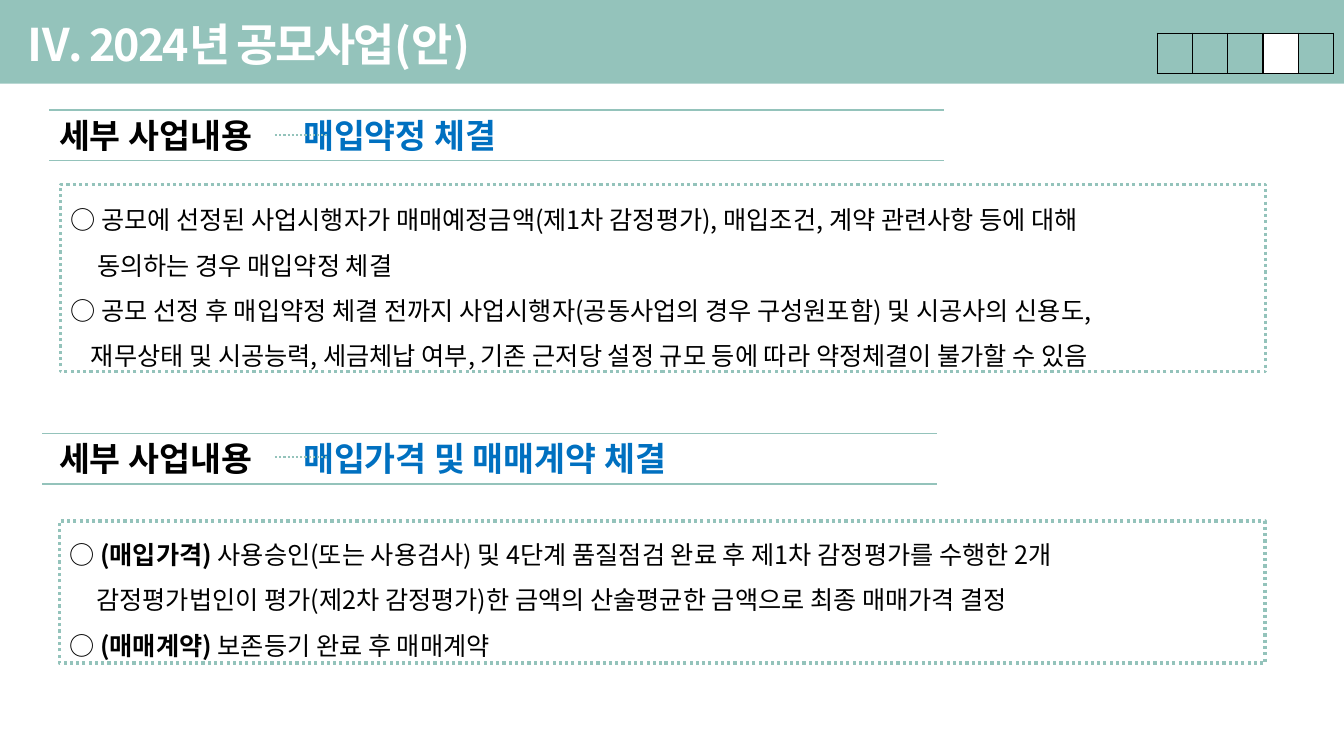
import pptx
import pptx.dml.color
import pptx.enum.dml
import pptx.enum.shapes
import pptx.enum.text
import pptx.oxml
import pptx.oxml.ns
import pptx.util

Cm = pptx.util.Cm
Pt = pptx.util.Pt
FONT = "Noto Sans CJK KR"
TEAL, WHITE, BLACK, BLUE = "94C3BB", "FFFFFF", "000000", "0070C0"
SLIDE_WIDTH, SLIDE_HEIGHT = 33.87, 19.05
FIRST_INDENT, SECOND_INDENT = 0.68, 0.52

CONTRACT_LINES = [
    (0, [("○ 공모에 선정된 사업시행자가 매매예정금액(제1차 감정평가), 매입조건, 계약 관련사항 등에 대해", False)]),
    (FIRST_INDENT, [("동의하는 경우 매입약정 체결", False)]),
    (0, [("○ 공모 선정 후 매입약정 체결 전까지 사업시행자(공동사업의 경우 구성원포함) 및 시공사의 신용도,", False)]),
    (SECOND_INDENT, [("재무상태 및 시공능력, 세금체납 여부, 기존 근저당 설정 규모 등에 따라 약정체결이 불가할 수 있음", False)]),
]
PRICE_LINES = [
    (0, [("○ ", False), ("(매입가격)", True),
         (" 사용승인(또는 사용검사) 및 4단계 품질점검 완료 후 제1차 감정평가를 수행한 2개", False)]),
    (FIRST_INDENT, [("감정평가법인이 평가(제2차 감정평가)한 금액의 산술평균한 금액으로 최종 매매가격 결정", False)]),
    (0, [("○ ", False), ("(매매계약)", True), (" 보존등기 완료 후 매매계약", False)]),
]


def color(value):
    return pptx.dml.color.RGBColor.from_string(value)


def fill_solid(fill, value):
    fill.solid()
    fill.fore_color.rgb = color(value)


def add_element(parent, tag, **attributes):
    element = pptx.oxml.parse_xml(f"<a:{tag} {pptx.oxml.ns.nsdecls('a')}/>")
    for name, value in attributes.items():
        element.set(name, str(value))
    parent.append(element)
    return element


def format_run(run, size, value, bold):
    run.font.size = Pt(size)
    run.font.bold = bold
    run.font.name = FONT
    run.font.color.rgb = color(value)
    add_element(run.font._element, "ea", typeface=FONT)


def add_run(paragraph, text, size, value, bold):
    run = paragraph.add_run()
    run.text = text
    format_run(run, size, value, bold)


def add_rectangle(slide, left, top, width, height):
    shape = slide.shapes.add_shape(pptx.enum.shapes.MSO_SHAPE.RECTANGLE,
                                   Cm(left), Cm(top), Cm(width), Cm(height))
    shape.shadow.inherit = False
    return shape


def add_text_box(slide, left, top, width, height):
    shape = slide.shapes.add_textbox(Cm(left), Cm(top), Cm(width), Cm(height))
    shape.text_frame.word_wrap = True
    shape.text_frame.auto_size = pptx.enum.text.MSO_AUTO_SIZE.SHAPE_TO_FIT_TEXT
    return shape


def add_rule(slide, left, top, width, weight, dotted=False):
    rule = slide.shapes.add_connector(pptx.enum.shapes.MSO_CONNECTOR.STRAIGHT,
                                      Cm(left), Cm(top), Cm(left + width), Cm(top))
    rule.line.color.rgb = color(TEAL)
    rule.line.width = Pt(weight)
    if dotted:
        rule.line.dash_style = pptx.enum.dml.MSO_LINE.ROUND_DOT
    add_element(rule._element.spPr, "effectLst")


def add_banner(slide, left, top, width, height):
    """Add the title and its progress table on the coloured band."""
    title = add_text_box(slide, left + 0.41, top + 0.3, 25.63, height - 0.48)
    paragraph = title.text_frame.paragraphs[0]
    paragraph.text = "Ⅳ. 2024년 공모사업(안)"
    format_run(paragraph.runs[0], 32, WHITE, True)
    paragraph.runs[0].font._element.set("spc", "-150")
    add_progress(slide, left + width - 4.71, top + 0.84, 4.45, 1.02)


def add_progress(slide, left, top, width, height, steps=5, current=3):
    frame = slide.shapes.add_table(1, steps, Cm(left), Cm(top), Cm(width), Cm(height))
    table = frame.table
    table.first_row = table.horz_banding = False
    for index, cell in enumerate(table.iter_cells()):
        properties = cell._tc.get_or_add_tcPr()
        for side in ("lnL", "lnR", "lnT", "lnB"):
            border = add_element(properties, side, w=Pt(1))
            add_element(add_element(border, "solidFill"), "srgbClr", val=BLACK)
        if index == current:
            fill_solid(cell.fill, WHITE)
        else:
            cell.fill.background()


def add_heading(slide, left, top, width, height, topic, rule_shift, dots_drop):
    """Add a section label and topic between two rules, joined by a dotted line."""
    heading = add_text_box(slide, left, top, width, height)
    paragraph = heading.text_frame.paragraphs[0]
    add_run(paragraph, "세부 사업내용\t", 24, BLACK, True)
    add_run(paragraph, topic, 24, BLUE, True)
    tabs = add_element(paragraph._p.get_or_add_pPr(), "tabLst")
    add_element(tabs, "tab", pos=Cm(6.15), algn="l")
    for rule_top in (top, top + height):
        add_rule(slide, left + rule_shift, rule_top, width - 0.35, 1)
    add_rule(slide, left + 5.69, top + dots_drop, 1.3, 1.5, dotted=True)


def add_panel(slide, left, top, width, height, lines, anchor):
    """Add a dotted box; each line is an indent and its (text, bold) runs."""
    panel = add_rectangle(slide, left, top, width, height)
    panel.fill.background()
    panel.line.color.rgb = color(TEAL)
    panel.line.width = Pt(2.25)
    panel.line.dash_style = pptx.enum.dml.MSO_LINE.ROUND_DOT
    text_frame = panel.text_frame
    text_frame.word_wrap = True
    text_frame.auto_size = pptx.enum.text.MSO_AUTO_SIZE.SHAPE_TO_FIT_TEXT
    text_frame.vertical_anchor = anchor
    for index, (indent, runs) in enumerate(lines):
        paragraph = text_frame.add_paragraph() if index else text_frame.paragraphs[0]
        paragraph.alignment = pptx.enum.text.PP_ALIGN.LEFT
        paragraph.line_spacing = 1.5
        if indent:
            paragraph._p.get_or_add_pPr().set("marL", str(Cm(indent)))
        for text, bold in runs:
            add_run(paragraph, text, 18, BLACK, bold)


def main():
    presentation = pptx.Presentation()
    presentation.slide_width = Cm(SLIDE_WIDTH)
    presentation.slide_height = Cm(SLIDE_HEIGHT)
    slide = presentation.slides.add_slide(presentation.slide_layouts[6])
    fill_solid(slide.background.fill, TEAL)

    banner_height = 2.11
    page = add_rectangle(slide, 0, banner_height, SLIDE_WIDTH, SLIDE_HEIGHT - banner_height)
    fill_solid(page.fill, WHITE)
    page.line.fill.background()

    anchors = pptx.enum.text.MSO_ANCHOR
    add_banner(slide, 0, 0, SLIDE_WIDTH, banner_height)
    add_heading(slide, 1.24, 2.77, 22.91, 1.28, "매입약정 체결", 0, 0.64)
    add_panel(slide, 1.52, 4.65, 30.38, 4.72, CONTRACT_LINES, anchors.TOP)
    add_heading(slide, 1.24, 10.92, 22.91, 1.28, "매입가격 및 매매계약 체결", -0.18, 0.59)
    add_panel(slide, 1.5, 13.13, 30.38, 3.58, PRICE_LINES, anchors.MIDDLE)
    presentation.save("out.pptx")


if __name__ == "__main__":
    main()
